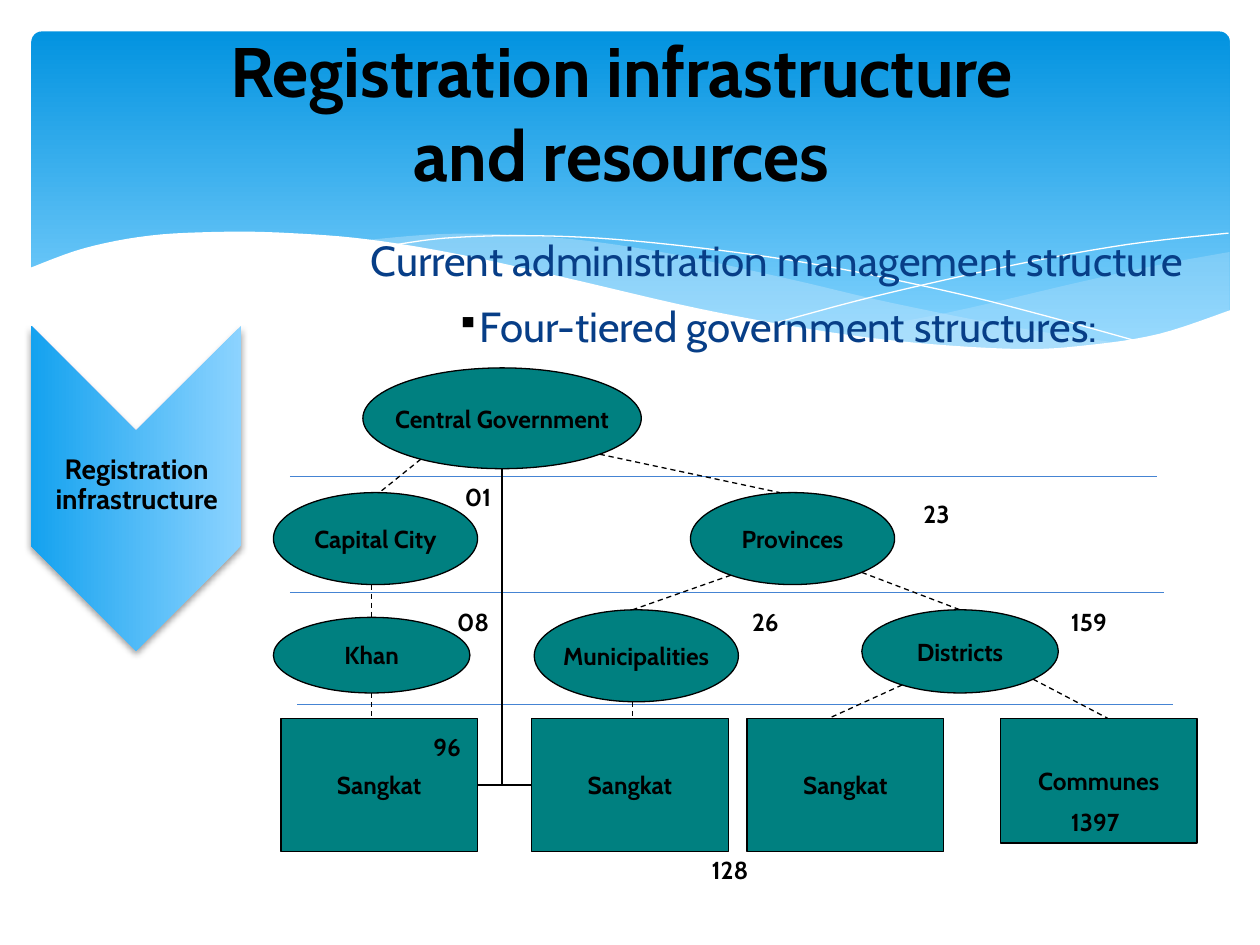
from dataclasses import dataclass
from math import sqrt
from typing import NamedTuple, Optional, Sequence

from lxml.etree import SubElement
from pptx import Presentation
from pptx.dml.color import RGBColor
from pptx.enum.dml import MSO_LINE
from pptx.enum.shapes import MSO_CONNECTOR, MSO_SHAPE as Preset
from pptx.enum.text import MSO_ANCHOR as Anchor, PP_ALIGN as Align
from pptx.oxml.ns import qn
from pptx.util import Inches, Pt

Point = tuple[float, float]


@dataclass(frozen=True)
class Theme:
    font: str = "Cabin"
    ink: str = "000000"
    paper: str = "FFFFFF"
    node: str = "008080"
    rule: str = "4584D3"
    subtitle: str = "073E87"
    wave: str = "C6E7FC"
    banner: tuple[str, str] = ("0293E0", "83D3FE")
    chevron: tuple[str, str] = ("8CD3FF", "14A2EF")
    title_size: int = 40
    subtitle_size: int = 24
    label_size: int = 16
    node_size: int = 14
    line_width: float = 0.75


THEME = Theme()


class Box(NamedTuple):
    left: float
    top: float
    width: float
    height: float


class Node(NamedTuple):
    """One body of government, with its number and where that number starts."""
    text: str
    box: Box
    preset: Preset = Preset.OVAL
    count: str = ""
    count_at: Point = (0, 0)


class Link(NamedTuple):
    """A dashed line from the lower rim of an oval to the top of a node below."""
    parent: Node
    child: Node
    start_x: float
    end_x: float


class Wave(NamedTuple):
    """Smooth edges joined at corners: a filled area, or an open white hairline."""
    edges: Sequence[Sequence[Point]]
    color: str = THEME.paper
    opacity: Optional[int] = None


def area_unit(text: str, left: float, count: str = "", count_at: Point = (0, 0),
              height: float = 1.06) -> Node:
    """A rectangle in the lowest tier."""
    return Node(text, Box(left, 5.7, 1.56, height), Preset.RECTANGLE, count, count_at)


CENTRAL = Node("Central Government", Box(2.88, 2.92, 2.21, 0.8))
CAPITAL = Node("Capital City", Box(2.17, 3.91, 1.62, 0.73), count="01", count_at=(3.59, 3.78))
PROVINCES = Node("Provinces", Box(5.48, 3.91, 1.62, 0.73), count="23", count_at=(7.23, 3.91))
KHAN = Node("Khan", Box(2.17, 4.9, 1.56, 0.6), count="08", count_at=(3.53, 4.77))
TOWNS = Node("Municipalities", Box(4.24, 4.84, 1.62, 0.73), count="26", count_at=(5.87, 4.77))
DISTRICTS = Node("Districts", Box(6.84, 4.84, 1.56, 0.66), count="159", count_at=(8.4, 4.77))
KHAN_SANGKAT = area_unit("Sangkat", 2.23, "96", (3.34, 5.76))
TOWN_SANGKAT = area_unit("Sangkat", 4.22, "128", (5.55, 6.74))
DISTRICT_SANGKAT = area_unit("Sangkat", 5.93)
COMMUNES = area_unit("Communes", 7.94, "1397", (8.4, 6.36), height=0.99)

NODES = [CENTRAL, CAPITAL, PROVINCES, KHAN, TOWNS, DISTRICTS,
         KHAN_SANGKAT, TOWN_SANGKAT, DISTRICT_SANGKAT, COMMUNES]
LINKS = [
    Link(CENTRAL, CAPITAL, 3.34, 3.01), Link(CENTRAL, PROVINCES, 4.76, 6.19),
    Link(CAPITAL, KHAN, 2.95, 2.95), Link(KHAN, KHAN_SANGKAT, 2.95, 2.95),
    Link(PROVINCES, TOWNS, 5.8, 5.02), Link(PROVINCES, DISTRICTS, 6.84, 7.62),
    Link(TOWNS, TOWN_SANGKAT, 5.02, 5.02),
    Link(DISTRICTS, DISTRICT_SANGKAT, 7.16, 6.58), Link(DISTRICTS, COMMUNES, 8.2, 8.79)]
TIER_RULES = [Box(2.3, 3.78, 6.88, 0), Box(2.3, 4.7, 6.94, 0), Box(2.36, 5.59, 6.95, 0)]

WAVES = [
    Wave([[(9.76, 2), (9.21, 2.1), (8.61, 2.23), (7.53, 2.48), (6.61, 2.65)],
          [(6.61, 2.65), (7.19, 2.72), (7.69, 2.77), (8.35, 2.77), (8.89, 2.72),
           (9.35, 2.62), (9.76, 2.47)]], THEME.wave, 29),
    Wave([[(8.93, 2.73), (8.07, 2.6), (7.06, 2.4), (6.29, 2.22), (5.41, 2.03),
           (4.65, 1.91), (3.99, 1.86), (3.44, 1.86), (2.86, 1.91)],
          [(2.86, 1.91), (3.62, 2.03), (4.49, 2.22), (5.3, 2.4), (6.34, 2.61),
           (7.22, 2.74), (7.96, 2.78), (8.57, 2.77), (8.93, 2.73)]], THEME.wave, 40),
    Wave([[(3.09, 1.95), (3.53, 1.89), (4.16, 1.87), (4.89, 1.9), (5.82, 2),
           (6.65, 2.13), (7.6, 2.33), (8.31, 2.51), (9.07, 2.72)]]),
    Wave([[(6.13, 2.57), (6.95, 2.35), (8.06, 2.1), (8.95, 1.94), (9.75, 1.85)]]),
    Wave([[(9.77, 2.46), (9.2, 2.65), (8.63, 2.74), (8.09, 2.77), (7.26, 2.72),
           (6.48, 2.62), (5.55, 2.45), (4.47, 2.2), (3.65, 2.02), (2.92, 1.9),
           (2.3, 1.85), (1.77, 1.84), (1.19, 1.87), (0.67, 1.97), (0.23, 2.13)],
          [(0.23, 3.29), (9.77, 3.29)]], THEME.paper, 100)]


def smooth(knots: Sequence[Point], steps: int = 6) -> list[Point]:
    """Points on the Catmull-Rom curve through the knots."""
    padded = [knots[0], *knots, knots[-1]]
    points = [knots[0]]
    for a, b, c, d in zip(padded, padded[1:], padded[2:], padded[3:]):
        for t in (step / steps for step in range(1, steps + 1)):
            points.append(tuple(
                q + ((r - p) * t + (2 * p - 5 * q + 4 * r - s) * t ** 2
                     + (3 * q - p - 3 * r + s) * t ** 3) / 2
                for p, q, r, s in zip(a, b, c, d)))
    return points


def lower_rim(box: Box, x: float) -> float:
    """Height at which the lower half of an ellipse passes x."""
    offset = (x - box.left) / box.width * 2 - 1
    return box.top + box.height / 2 * (1 + sqrt(1 - offset ** 2))


def rgb(color: str) -> RGBColor:
    return RGBColor.from_string(color)


def fill_solid(shape, color: str) -> None:
    shape.fill.solid()
    shape.fill.fore_color.rgb = rgb(color)


def fill_gradient(shape, colors: tuple[str, str], last: float = 1.0) -> None:
    """Run a gradient downwards, with its second colour reached at last."""
    shape.fill.gradient()
    shape.fill.gradient_angle = 270
    for stop, color, position in zip(shape.fill.gradient_stops, colors, (0, last)):
        stop.color.rgb, stop.position = rgb(color), position


def add_preset(page, preset: Preset, box: Box):
    shape = page.shapes.add_shape(preset, *map(Inches, box))
    shape.shadow.inherit = False
    shape.line.fill.background()
    return shape


def write(shape, lines: Sequence[str], size: int, color: str = THEME.ink,
          bold: bool = True, align: Align = Align.CENTER) -> list:
    frame = shape.text_frame
    paras = [frame.paragraphs[0]] + [frame.add_paragraph() for _ in lines[1:]]
    for para, line in zip(paras, lines):
        para.text, para.alignment = line, align
        para.font.name, para.font.size, para.font.bold = THEME.font, Pt(size), bold
        para.font.color.rgb = rgb(color)
    return paras


def add_text(page, box: Box, lines: Sequence[str], size: int, **style) -> tuple:
    shape = page.shapes.add_textbox(*map(Inches, box))
    shape.text_frame.word_wrap = True
    return shape.text_frame, write(shape, lines, size, **style)


def add_wave(page, wave: Wave) -> None:
    filled = wave.opacity is not None
    points = [(Inches(x), Inches(y)) for edge in wave.edges for x, y in smooth(edge)]
    builder = page.shapes.build_freeform(*points[0], scale=1.0)
    builder.add_line_segments(points[1:], close=filled)
    shape = builder.convert_to_shape()
    shape.shadow.inherit = False
    if filled:
        shape.line.fill.background()
        fill_solid(shape, wave.color)
        tone = shape._element.spPr.find(f"{qn('a:solidFill')}/{qn('a:srgbClr')}")
        SubElement(tone, qn("a:alpha"), val=str(wave.opacity * 1000))
    else:
        shape.fill.background()
        shape.line.color.rgb, shape.line.width = rgb(wave.color), Pt(0)


def add_line(page, start: Point, end: Point, color: str = THEME.ink, dashed: bool = False):
    ends = map(Inches, (*start, *end))
    line = page.shapes.add_connector(MSO_CONNECTOR.STRAIGHT, *ends)
    line.line.color.rgb, line.line.width = rgb(color), Pt(THEME.line_width)
    if dashed:
        line.line.dash_style = MSO_LINE.DASH
    SubElement(line._element.spPr, qn("a:effectLst"))
    return line


def add_node(page, node: Node):
    shape = add_preset(page, node.preset, node.box)
    fill_solid(shape, THEME.node)
    shape.line.color.rgb, shape.line.width = rgb(THEME.ink), Pt(THEME.line_width)
    shape.text_frame.word_wrap = False
    shape.text_frame.vertical_anchor = Anchor.MIDDLE
    write(shape, [node.text], THEME.node_size)
    return shape


def add_background(page) -> None:
    banner = add_preset(page, Preset.ROUNDED_RECTANGLE, Box(0.25, 0.25, 9.51, 2.7))
    banner.adjustments[0] = 0.03
    fill_gradient(banner, THEME.banner, last=0.9)
    for wave in WAVES:
        add_wave(page, wave)


def add_headings(page) -> None:
    add_text(page, Box(0.27, 0.17, 9.33, 1.45),
             ["Registration infrastructure", "and resources"], THEME.title_size)
    _, paras = add_text(
        page, Box(2.58, 1.75, 7.17, 1.17),
        ["Current administration management structure", "Four-tiered government structures:"],
        THEME.subtitle_size, color=THEME.subtitle, bold=False)
    for para in paras:
        para.line_spacing, para.space_before = 1.15, Pt(0.2 * THEME.subtitle_size)
    props = paras[1]._p.get_or_add_pPr()
    props.set("marL", str(Inches(0.18)))
    props.set("indent", str(Inches(-0.18)))
    SubElement(SubElement(props, qn("a:buClr")), qn("a:srgbClr"), val=THEME.ink)
    SubElement(props, qn("a:buSzPct"), val="75000")
    SubElement(props, qn("a:buChar"), char="▪")


def add_chevron(page) -> None:
    chevron = add_preset(page, Preset.CHEVRON, Box(-0.21, 3.04, 2.58, 1.67))
    chevron.rotation = 90
    fill_gradient(chevron, THEME.chevron)
    effects = chevron._element.spPr.find(qn("a:effectLst"))
    shadow = SubElement(effects, qn("a:outerShdw"), blurRad=str(Pt(4)), dist=str(Pt(2)),
                        dir="5400000", rotWithShape="0")
    tone = SubElement(shadow, qn("a:srgbClr"), val=THEME.ink)
    SubElement(tone, qn("a:alpha"), val="38000")
    frame, paras = add_text(page, Box(0.25, 3.08, 1.67, 1.55),
                            ["Registration infrastructure"], THEME.label_size)
    frame.vertical_anchor = Anchor.MIDDLE
    frame.margin_left = frame.margin_right = Inches(0.01)
    paras[0].line_spacing = 0.9


def add_hierarchy(page) -> None:
    for rule in TIER_RULES:
        add_line(page, rule[:2], (rule.left + rule.width, rule.top), THEME.rule)
    shapes = {node: add_node(page, node) for node in NODES}
    for parent, child, start_x, end_x in LINKS:
        add_line(page, (start_x, lower_rim(parent.box, start_x)),
                 (end_x, child.box.top), dashed=True)

    left, right = KHAN_SANGKAT.box, TOWN_SANGKAT.box
    middle = left.top + left.height / 2
    stem_x = CENTRAL.box.left + CENTRAL.box.width / 2
    add_line(page, (stem_x, lower_rim(CENTRAL.box, stem_x)), (stem_x, middle))
    bridge = add_line(page, (left.left + left.width, middle), (right.left, middle))
    bridge.begin_connect(shapes[KHAN_SANGKAT], 3)
    bridge.end_connect(shapes[TOWN_SANGKAT], 1)

    for node in filter(lambda node: node.count, NODES):
        width = 0.3 + 0.16 * len(node.count)
        add_text(page, Box(*node.count_at, width, 0.33), [node.count],
                 THEME.node_size, align=Align.LEFT)


def main() -> None:
    deck = Presentation()
    deck.slide_width, deck.slide_height = Inches(10), Inches(7.5)
    page = deck.slides.add_slide(deck.slide_layouts[6])
    for draw in (add_background, add_headings, add_chevron, add_hierarchy):
        draw(page)
    deck.save("out.pptx")


if __name__ == "__main__":
    main()
